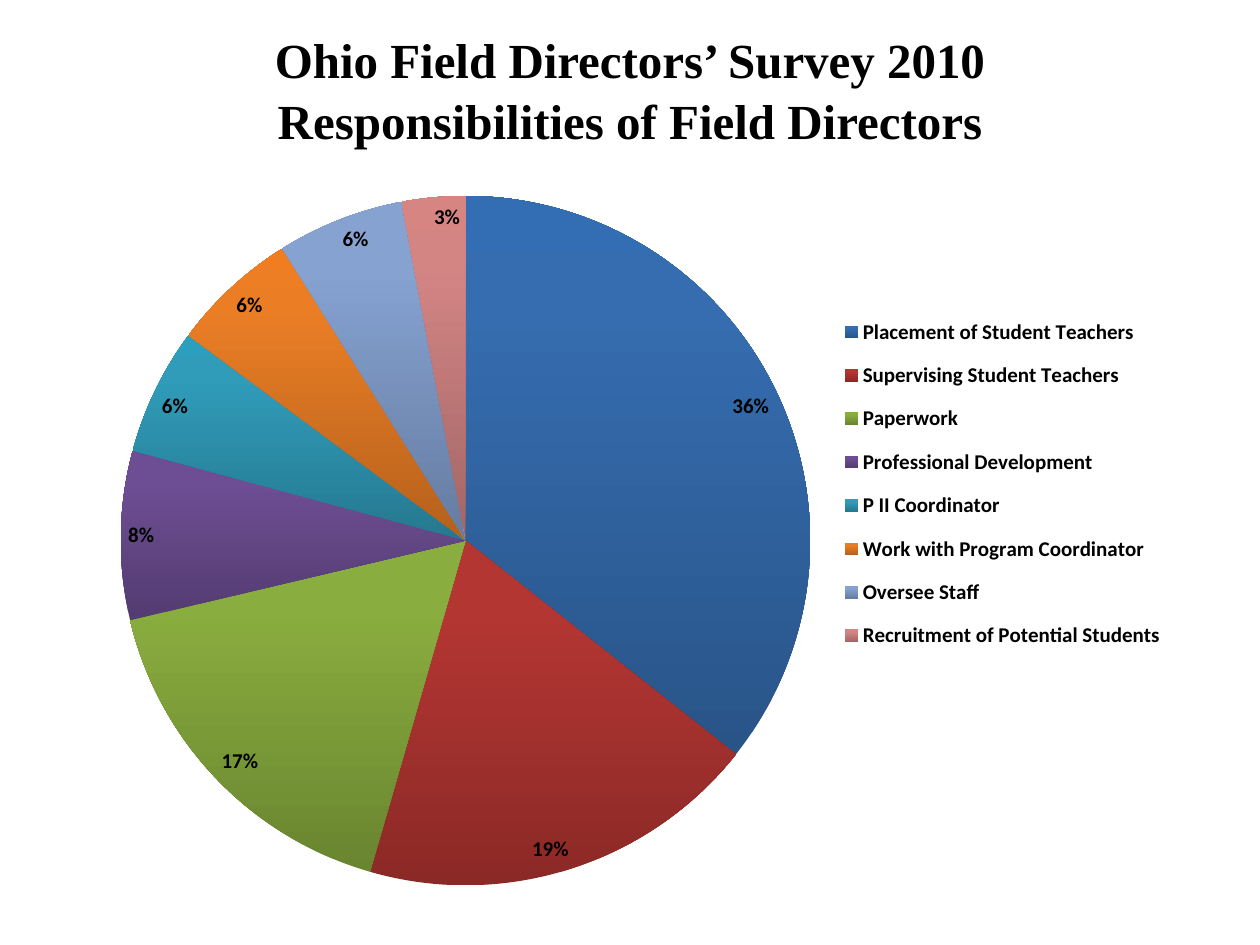
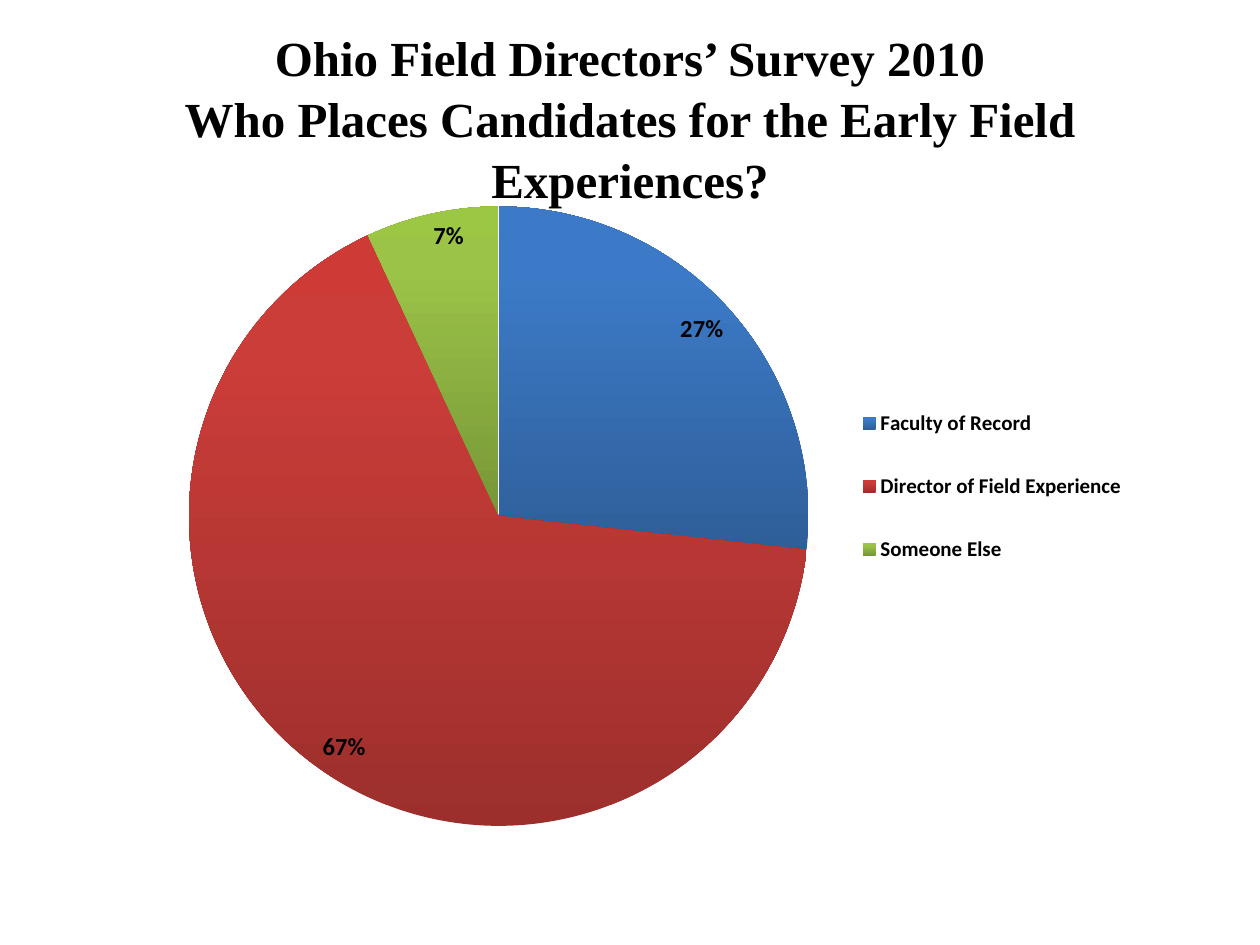
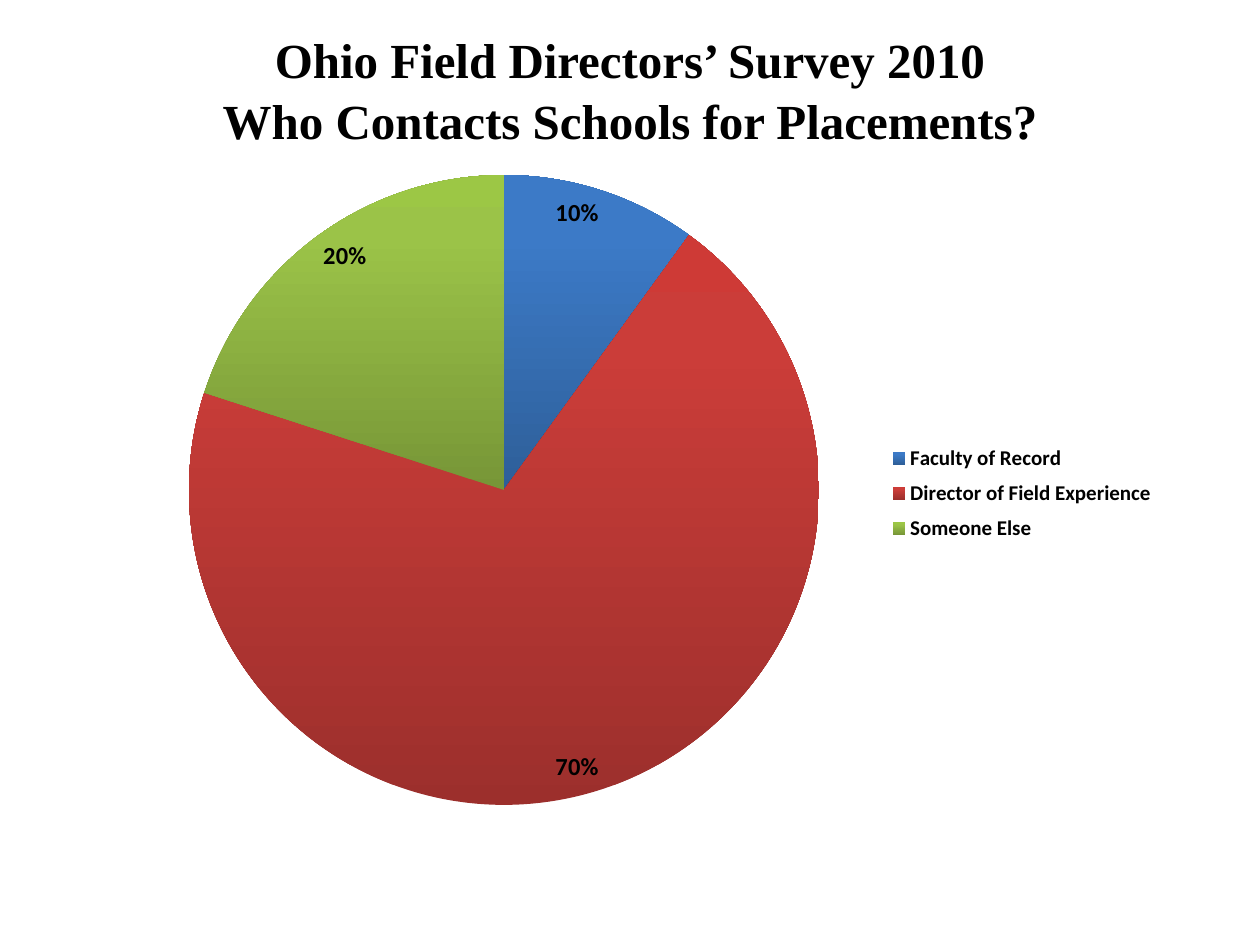
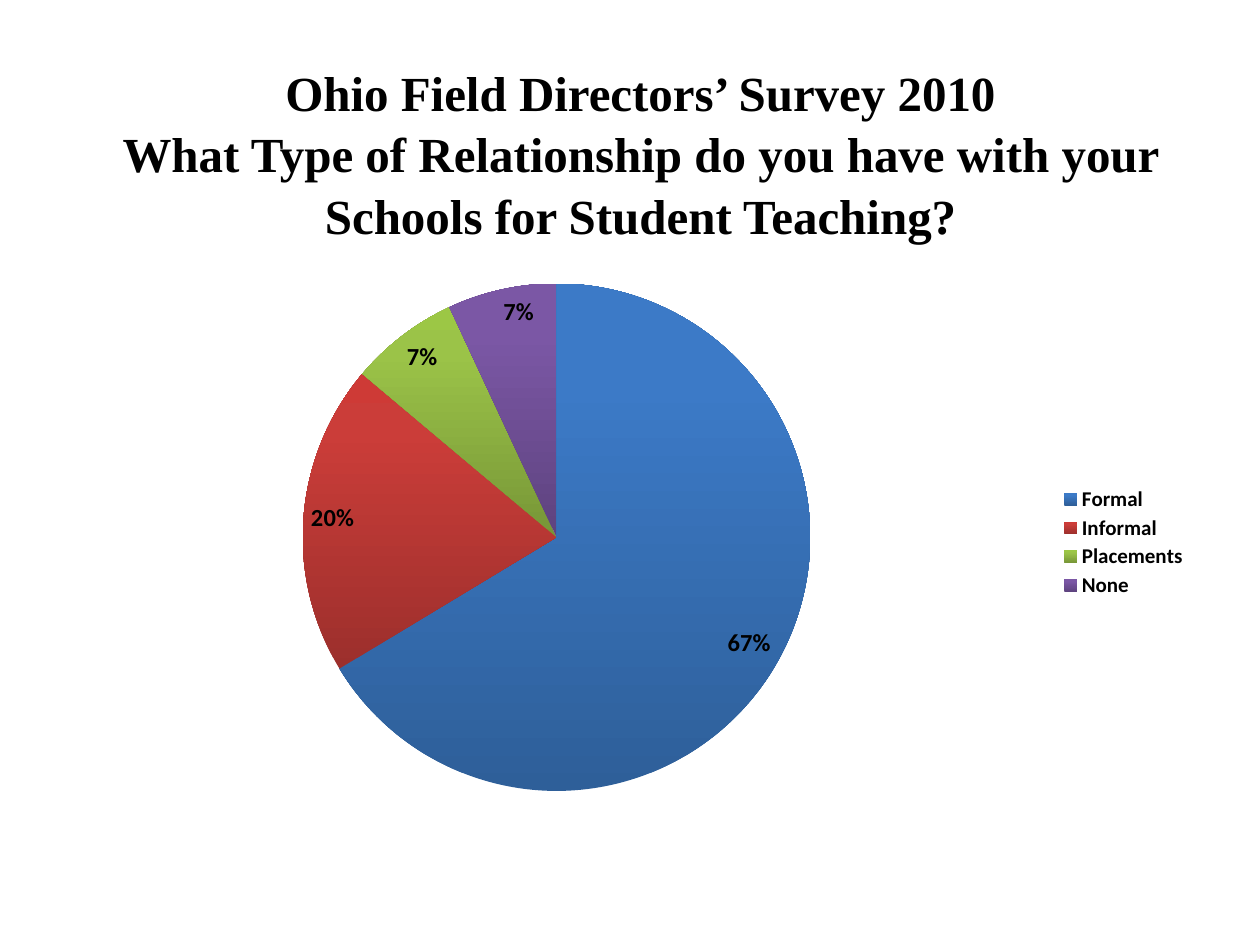
from dataclasses import dataclass

from pptx import Presentation
from pptx.chart.data import CategoryChartData
from pptx.dml.color import RGBColor
from pptx.enum.chart import XL_CHART_TYPE, XL_LABEL_POSITION, XL_LEGEND_POSITION
from pptx.enum.text import MSO_ANCHOR, MSO_AUTO_SIZE, PP_ALIGN
from pptx.oxml import parse_xml
from pptx.oxml.ns import nsdecls
from pptx.util import Pt


@dataclass(frozen=True)
class Theme:
    title_font: str = "Times New Roman"
    chart_font: str = "Calibri"
    ink: RGBColor = RGBColor(0, 0, 0)
    title_size: int = 28
    chart_size: int = 10
    legend_size: int = 12
    accents: tuple = ("4F81BD", "C0504D", "9BBB59", "8064A2", "4BACC6", "F79646")
    # Gradient stops from bottom to top: position, shade, saturation
    stops: tuple = ((0, 51000, 130000), (80000, 93000, 130000), (100000, 94000, 135000))


theme = Theme()


def gradient_fill(color, variant):
    """Return the glossy slice fill; variant is an extra shade or tint."""
    stops = "".join(
        f'<a:gs pos="{position}"><a:srgbClr val="{color}">{variant}'
        f'<a:shade val="{shade}"/><a:satMod val="{saturation}"/></a:srgbClr></a:gs>'
        for position, shade, saturation in theme.stops
    )
    return parse_xml(
        f'<a:gradFill {nsdecls("a")} rotWithShape="1"><a:gsLst>{stops}</a:gsLst>'
        '<a:lin ang="16200000" scaled="0"/></a:gradFill>'
    )


def place_part(part, index, area, frame, target=""):
    """Fix a chart part at area (points on the slide) within the chart frame."""
    for old_layout in part.xpath("c:layout"):
        part.remove(old_layout)
    left, top, width, height = area
    values = {
        "x": (left - frame[0]) / frame[2],
        "y": (top - frame[1]) / frame[3],
        "w": width / frame[2],
        "h": height / frame[3],
    }
    modes = '<c:xMode val="edge"/><c:yMode val="edge"/>'
    sizes = "".join(f'<c:{name} val="{value:.4f}"/>' for name, value in values.items())
    part.insert(index, parse_xml(
        f'<c:layout {nsdecls("c")}><c:manualLayout>{target}{modes}{sizes}'
        "</c:manualLayout></c:layout>"
    ))


# Survey content; frames are left, top, width, height and pies left, top, diameter
title_frame = (36, 21.6, 648, 90)
placers = ("Faculty of Record", "Director of Field Experience", "Someone Else")
surveys = [
    dict(question="Responsibilities of Field Directors",
         title=title_frame, bottom_inset=36, frame=(30, 84, 666, 432),
         pie=(69, 112, 394), legend=(478, 172, 190, 209), label_size=12,
         categories=("Placement of Student Teachers", "Supervising Student Teachers",
                     "Paperwork", "Professional Development", "P II Coordinator",
                     "Work with Program Coordinator", "Oversee Staff",
                     "Recruitment of Potential Students"),
         values=(36, 19, 17, 8, 6, 6, 6, 3)),
    dict(question="Who Places Candidates for the Early Field Experiences?",
         title=title_frame, bottom_inset=3.6, frame=(36, 108, 660, 374.4),
         pie=(108, 118, 354), legend=(487, 213, 160, 130), label_size=14,
         categories=placers, values=(27, 67, 7)),
    dict(question="Who Contacts Schools for Placements?",
         title=title_frame, bottom_inset=36, frame=(48, 90, 642, 380),
         pie=(108, 100, 360), legend=(504, 249, 160, 66), label_size=14,
         categories=placers, values=(10, 70, 20)),
    dict(question="What Type of Relationship do you have with your "
                  "Schools for Student Teaching?",
         title=(42, 36, 648, 102), bottom_inset=3.6, frame=(24, 132, 660, 356.4),
         pie=(173, 162, 290), legend=(603, 276, 78, 68), label_size=14,
         categories=("Formal", "Informal", "Placements", "None"),
         values=(67, 20, 7, 7)),
]

deck = Presentation()
deck.slide_width, deck.slide_height = Pt(720), Pt(540)

for survey in surveys:
    page = deck.slides.add_slide(deck.slide_layouts[5])

    # Title
    title = page.shapes.title
    title.left, title.top, title.width, title.height = map(Pt, survey["title"])
    box = title.text_frame
    box.word_wrap = True
    box.auto_size = MSO_AUTO_SIZE.NONE
    box.vertical_anchor = MSO_ANCHOR.MIDDLE
    box.margin_bottom = Pt(survey["bottom_inset"])
    para = box.paragraphs[0]
    para.text = "Ohio Field Directors’ Survey 2010\v" + survey["question"]
    para.alignment = PP_ALIGN.CENTER
    para.line_spacing = 1.04
    para.font.name = theme.title_font
    para.font.size = Pt(theme.title_size)
    para.font.bold = True
    para.font.color.rgb = theme.ink

    # Pie chart
    data = CategoryChartData()
    data.categories = survey["categories"]
    data.add_series("Series 1", survey["values"])
    frame = survey["frame"]
    chart = page.shapes.add_chart(XL_CHART_TYPE.PIE, *map(Pt, frame), data).chart
    chart.has_title = False
    chart.font.name = theme.chart_font
    chart.font.size = Pt(theme.chart_size)
    chart.font.color.rgb = theme.ink
    plot = chart.plots[0]
    plot.vary_by_categories = True

    # Slices: a long series darkens the first round of accents, lightens the next
    count = len(survey["values"])
    accent_count = len(theme.accents)
    for index in range(count):
        point = plot.series[0].points[index]
        point.format.fill.solid()
        variant = ""
        if count > accent_count:
            variant = ('<a:shade val="76000"/>' if index < accent_count
                       else '<a:tint val="77000"/>')
        fill = gradient_fill(theme.accents[index % accent_count], variant)
        solid = plot.series[0]._element.xpath("c:dPt/c:spPr/a:solidFill")[0]
        solid.getparent().replace(solid, fill)

    # Percentage labels
    plot.has_data_labels = True
    labels = plot.data_labels
    labels.show_value = True
    labels.show_percentage = False
    labels.number_format = '0"%"'
    labels.number_format_is_linked = False
    labels.position = XL_LABEL_POSITION.INSIDE_END

    # Legend
    chart.has_legend = True
    legend = chart.legend
    legend.position = XL_LEGEND_POSITION.RIGHT
    legend.include_in_layout = False
    for font, size in ((labels.font, survey["label_size"]),
                       (legend.font, theme.legend_size)):
        font.name = theme.chart_font
        font.size = Pt(size)
        font.bold = True
        font.color.rgb = theme.ink

    # Fixed places of pie and legend
    left, top, diameter = survey["pie"]
    plot_area = chart._chartSpace.xpath("c:chart/c:plotArea")[0]
    place_part(plot_area, 0, (left, top, diameter, diameter), frame,
               '<c:layoutTarget val="inner"/>')
    place_part(legend._element, 1, survey["legend"], frame)

deck.save("out.pptx")
